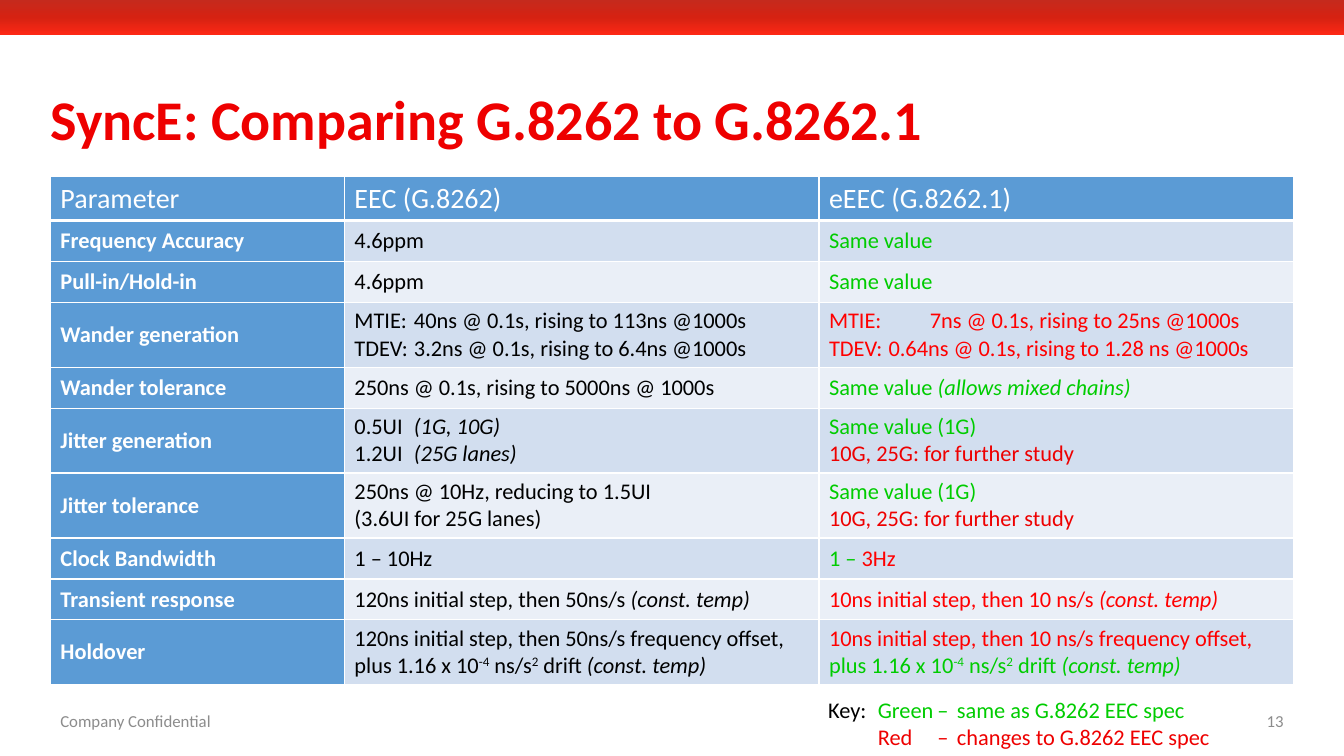
from copy import deepcopy

from lxml import etree
from pptx import Presentation
from pptx.dml.color import RGBColor
from pptx.enum.shapes import MSO_SHAPE
from pptx.enum.text import MSO_ANCHOR, PP_ALIGN
from pptx.oxml.ns import qn
from pptx.util import Pt

MID, TOP = MSO_ANCHOR.MIDDLE, MSO_ANCHOR.TOP
LEFT, RIGHT = PP_ALIGN.LEFT, PP_ALIGN.RIGHT

FONT = "Calibri"
WHITE, BLACK, GREY = "FFFFFF", "000000", "8C8C8C"
GREEN, RED, DEEP = "00CC00", "FF0000", "EE0000"
BLUE, BANDS = "5B9BD5", ("D2DEEF", "EAEFF7")
BAR = [(0, "C52A1D"), (0.5, "D52212"), (1, "FD2815")]

# A paragraph is (colour, run, ...); a run is text or (text, style),
# where style is "i" for italic, "^" for superscript, or a colour.
TEMP = ("(const. temp)", "i")
DRIFT = ["plus 1.16 x 10", ("-4", "^"), " ns/s", ("2", "^"), " drift ", TEMP]
STUDY = [(GREEN, "Same value (1G)"), (DEEP, "10G, 25G: for further study")]
SAME = [(GREEN, "Same value")]

HEAD = ["Parameter", "EEC (G.8262)", "eEEC (G.8262.1)"]
ROWS = [
    ("Frequency Accuracy", [(BLACK, "4.6ppm")], SAME),
    ("Pull-in/Hold-in", [(BLACK, "4.6ppm")], SAME),
    ("Wander generation",
     [(BLACK, "MTIE: \t40ns @ 0.1s, rising to 113ns @1000s"),
      (BLACK, "TDEV: \t3.2ns @ 0.1s, rising to 6.4ns @1000s")],
     [(RED, "MTIE: \t7ns @ 0.1s, rising to 25ns @1000s"),
      (RED, "TDEV: \t0.64ns @ 0.1s, rising to 1.28 ns @1000s")]),
    ("Wander tolerance",
     [(BLACK, "250ns @ 0.1s, rising to 5000ns @ 1000s")],
     [(GREEN, "Same value ", ("(allows mixed chains)", "i"))]),
    ("Jitter generation",
     [(BLACK, "0.5UI \t", ("(1G, 10G)", "i")),
      (BLACK, "1.2UI \t", ("(25G lanes)", "i"))],
     STUDY),
    ("Jitter tolerance",
     [(BLACK, "250ns @ 10Hz, reducing to 1.5UI\n(3.6UI for 25G lanes)")],
     STUDY),
    ("Clock Bandwidth", [(BLACK, "1 – 10Hz")], [(GREEN, "1 – ", ("3Hz", RED))]),
    ("Transient response",
     [(BLACK, "120ns initial step, then 50ns/s ", TEMP)],
     [(RED, "10ns initial step, then 10 ns/s ", TEMP)]),
    ("Holdover",
     [(BLACK, "120ns initial step, then 50ns/s frequency offset,\n", *DRIFT)],
     [(RED, "10ns initial step, then 10 ns/s frequency offset,"),
      (GREEN, *DRIFT)]),
]
KEY = [
    (GREEN, ("Key:\t", BLACK), "Green\t–\tsame as G.8262 EEC spec"),
    (DEEP, "\tRed\t–\tchanges to G.8262 EEC spec"),
]
WIDE = {"7ns": 72}  # red MTIE value stands at the second stop
STOP = 42.5
COLS = (210, 339, 339)
TALL = {1: 29.25, 2: 46.4}


def rgb(code):
    return RGBColor.from_string(code)


def stops(para, places):
    """Add left tab stops, in points, to a paragraph."""
    tabs = etree.SubElement(para._p.get_or_add_pPr(), qn("a:tabLst"))
    for x in places:
        etree.SubElement(tabs, qn("a:tab"), pos=str(int(Pt(x))), algn="l")


def add_run(para, text, style):
    for n, part in enumerate(text.split("\n")):
        if n:
            para.add_line_break()
        if not part:
            continue
        run = para.add_run()
        run.text = part
        if style == "i":
            run.font.italic = True
        elif style == "^":
            run._r.get_or_add_rPr().set("baseline", "30000")
        elif style:
            run.font.color.rgb = rgb(style)


def write(frame, paras, size, bold=False, align=LEFT, tabs=()):
    for n, (ink, *runs) in enumerate(paras):
        para = frame.add_paragraph() if n else frame.paragraphs[0]
        para.alignment = align
        if tabs:
            stops(para, tabs)
        elif "\t" in str(runs[0]):
            stops(para, [next((x for w, x in WIDE.items()
                               if "\t" + w in runs[0]), STOP)])
        font = para.font
        font.name, font.size, font.bold = FONT, Pt(size), bold
        font.color.rgb = rgb(ink)
        for run in runs:
            text, style = (run, "") if isinstance(run, str) else run
            add_run(para, text, style)


def add_text(slide, box, paras, size, anchor=MID, **look):
    frame = slide.shapes.add_textbox(*map(Pt, box)).text_frame
    frame.word_wrap = True
    frame.vertical_anchor = anchor
    write(frame, paras, size, **look)
    return frame


def add_bar(slide):
    bar = slide.shapes.add_shape(MSO_SHAPE.RECTANGLE, 0, 0, Pt(960), Pt(25))
    bar.shadow.inherit = False
    bar.line.fill.background()
    bar.fill.gradient()
    bar.fill.gradient_angle = 270
    group = bar._element.spPr.find(".//" + qn("a:gsLst"))
    group.append(deepcopy(group[-1]))
    for stop, (place, code) in zip(bar.fill.gradient_stops, BAR):
        stop.position = place
        stop.color.rgb = rgb(code)


def underline(cell):
    """Draw a white 3 pt line below a cell."""
    line = etree.SubElement(cell._tc.get_or_add_tcPr(), qn("a:lnB"),
                            w=str(int(Pt(3))))
    fill = etree.SubElement(line, qn("a:solidFill"))
    etree.SubElement(fill, qn("a:srgbClr"), val=WHITE)


def fill_cell(cell, paras, back, size=16, bold=False):
    cell.vertical_anchor = MID
    cell.fill.solid()
    cell.fill.fore_color.rgb = rgb(back)
    write(cell.text_frame, paras, size, bold)


def add_grid(slide):
    grid = slide.shapes.add_table(len(ROWS) + 1, len(COLS), Pt(36), Pt(126),
                                  Pt(sum(COLS)), Pt(360)).table
    grid.first_row = grid.horz_banding = False
    for col, width in zip(grid.columns, COLS):
        col.width = Pt(width)
    grid.rows[0].height = Pt(31.5)
    for c, name in enumerate(HEAD):
        underline(grid.cell(0, c))
        fill_cell(grid.cell(0, c), [(WHITE, name)], BLUE, 20)
    for r, (name, *values) in enumerate(ROWS, 1):
        grid.rows[r].height = Pt(TALL[max(map(len, values))])
        fill_cell(grid.cell(r, 0), [(WHITE, name)], BLUE, bold=True)
        for c, paras in enumerate(values, 1):
            fill_cell(grid.cell(r, c), paras, BANDS[(r - 1) % 2])


def main():
    deck = Presentation()
    deck.slide_width, deck.slide_height = Pt(960), Pt(540)
    slide = deck.slides.add_slide(deck.slide_layouts[6])
    add_bar(slide)
    title = add_text(slide, (36, 65.5, 700, 44),
                     [(DEEP, "SyncE: Comparing G.8262 to G.8262.1")], 40,
                     bold=True)
    title.margin_left = title.margin_right = 0
    title.margin_top = title.margin_bottom = 0
    title.paragraphs[0].line_spacing = 0.9
    add_grid(slide)
    add_text(slide, (36, 500.5, 216, 29), [(GREY, "Company Confidential")], 12)
    add_text(slide, (584.5, 494, 310, 46), KEY, 16, TOP,
             tabs=(35.5, 78, 92))
    add_text(slide, (708, 500.5, 216, 29), [(GREY, "13")], 12, align=RIGHT)
    deck.save("out.pptx")


if __name__ == "__main__":
    main()
